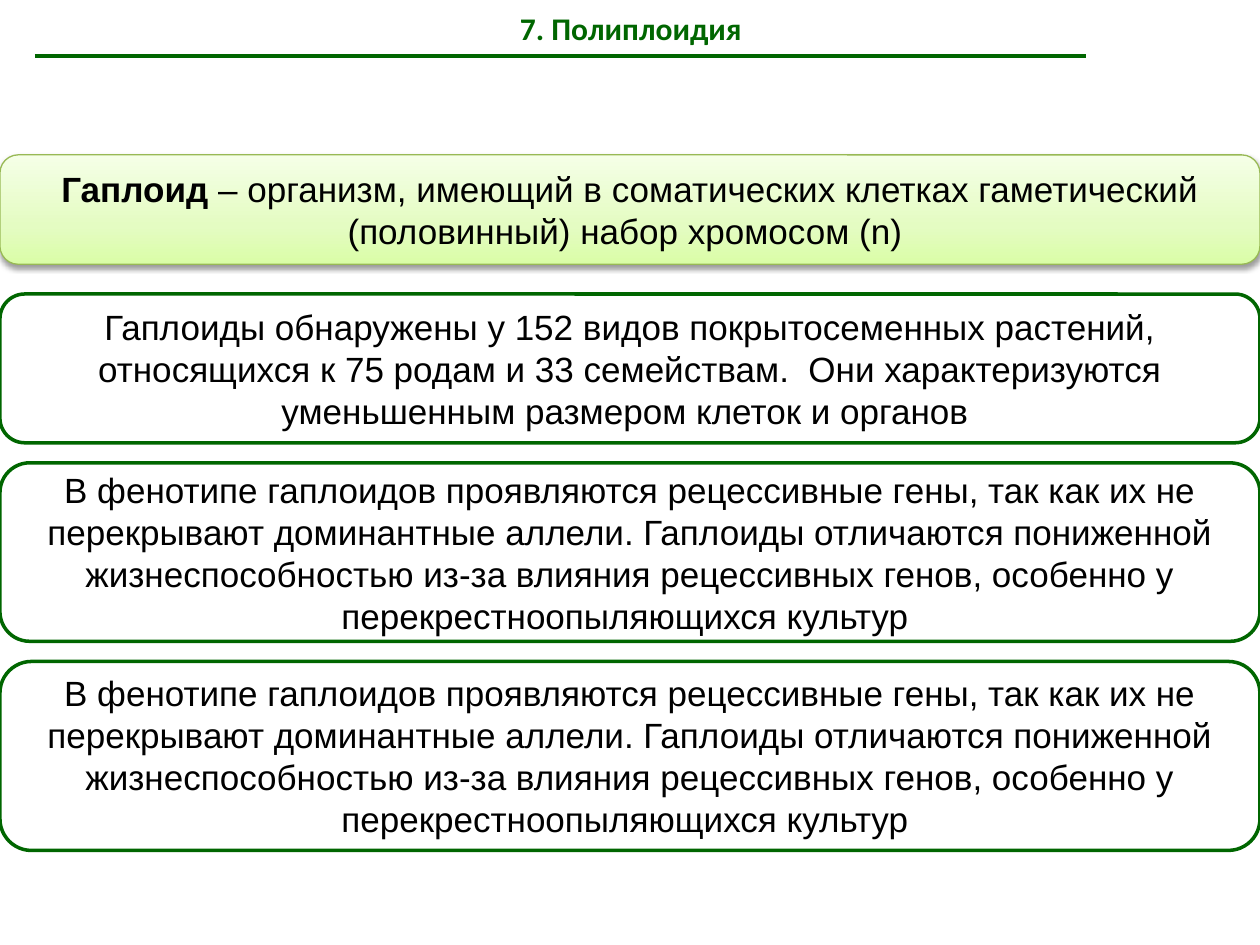
from copy import deepcopy
from dataclasses import dataclass

from lxml.etree import SubElement
from pptx import Presentation
from pptx.dml.color import RGBColor
from pptx.enum.shapes import MSO_CONNECTOR, MSO_SHAPE
from pptx.enum.text import MSO_ANCHOR, PP_ALIGN
from pptx.oxml.ns import qn
from pptx.shapes.autoshape import Shape
from pptx.slide import Slide
from pptx.text.text import TextFrame
from pptx.util import Pt


@dataclass(frozen=True)
class Theme:
    green: RGBColor = RGBColor.from_string("006600")
    ink: RGBColor = RGBColor.from_string("000000")
    accent_line: RGBColor = RGBColor.from_string("98B955")
    gradient: tuple = ((0, "DAFDA7"), (0.35, "E4FCC2"), (1, "F5FFE7"))
    title_font: str = "Calibri"
    body_font: str = "Arial"
    title_size: float = 18
    body_size: float = 20
    rule: float = 2
    thin_rule: float = 0.75


@dataclass(frozen=True)
class Panel:
    top: float
    height: float
    text: str
    term: str = ""


THEME = Theme()
WIDTH, HEIGHT = 720, 540
PHENOTYPE = (
    "В фенотипе гаплоидов проявляются рецессивные гены, так как их не "
    "перекрывают доминантные аллели. Гаплоиды отличаются пониженной "
    "жизнеспособностью из-за влияния рецессивных генов, особенно у "
    "перекрестноопыляющихся культур "
)
PANELS = (
    Panel(88.5, 62.5,
          "– организм, имеющий в соматических клетках гаметический "
          "(половинный) набор хромосом (n) ", term="Гаплоид "),
    Panel(168, 85,
          "Гаплоиды обнаружены у 152 видов покрытосеменных растений, "
          "относящихся к 75 родам и 33 семействам.  Они характеризуются "
          "уменьшенным размером клеток и органов "),
    Panel(264.5, 102, PHENOTYPE),
    Panel(378, 108, PHENOTYPE),
)


def write(frame: TextFrame, pieces: list[tuple[str, bool]], font: str,
          size: float, color: RGBColor) -> None:
    frame.word_wrap = True
    frame.vertical_anchor = MSO_ANCHOR.MIDDLE
    paragraph = frame.paragraphs[0]
    paragraph.alignment = PP_ALIGN.CENTER
    for text, bold in pieces:
        run = paragraph.add_run()
        run.text = text
        run.font.name = font
        run.font.size = Pt(size)
        run.font.bold = bold
        run.font.color.rgb = color


def highlight(definition: Shape) -> None:
    fill = definition.fill
    fill.gradient()
    fill.gradient_angle = 90
    properties = definition._element.spPr
    stops = properties.find(qn("a:gradFill")).find(qn("a:gsLst"))
    stops.insert(1, deepcopy(stops[0]))
    for stop, (position, color) in zip(fill.gradient_stops, THEME.gradient):
        stop.position = position
        stop.color.rgb = RGBColor.from_string(color)
    definition.line.color.rgb = THEME.accent_line
    definition.line.width = Pt(THEME.thin_rule)
    shadow = SubElement(
        properties.find(qn("a:effectLst")), qn("a:outerShdw"),
        blurRad=str(Pt(3.1)), dist=str(Pt(1.6)), dir="5400000", rotWithShape="0")
    shade = SubElement(shadow, qn("a:srgbClr"), val=str(THEME.ink))
    SubElement(shade, qn("a:alpha"), val="38000")


def draw_panel(slide: Slide, panel: Panel) -> None:
    box = slide.shapes.add_shape(
        MSO_SHAPE.ROUNDED_RECTANGLE, 0, Pt(panel.top), Pt(WIDTH), Pt(panel.height))
    box.shadow.inherit = False
    if panel.term:
        highlight(box)
    else:
        box.fill.background()
        box.line.color.rgb = THEME.green
        box.line.width = Pt(THEME.rule)
    pieces = [(panel.term, True)] if panel.term else []
    write(box.text_frame, pieces + [(panel.text, False)],
          THEME.body_font, THEME.body_size, THEME.ink)


def draw_heading(slide: Slide) -> None:
    underline = slide.shapes.add_connector(
        MSO_CONNECTOR.STRAIGHT, Pt(20), Pt(32), Pt(620.5), Pt(32))
    underline.line.color.rgb = THEME.green
    underline.line.width = Pt(THEME.rule)
    SubElement(underline._element.spPr, qn("a:effectLst"))
    title = slide.shapes.add_textbox(Pt(36.5), 0, Pt(648), Pt(32))
    write(title.text_frame, [("7. Полиплоидия", True)],
          THEME.title_font, THEME.title_size, THEME.green)


def main() -> None:
    deck = Presentation()
    deck.slide_width, deck.slide_height = Pt(WIDTH), Pt(HEIGHT)
    slide = deck.slides.add_slide(deck.slide_layouts[6])
    draw_heading(slide)
    for panel in PANELS:
        draw_panel(slide, panel)
    deck.save("out.pptx")


if __name__ == "__main__":
    main()
